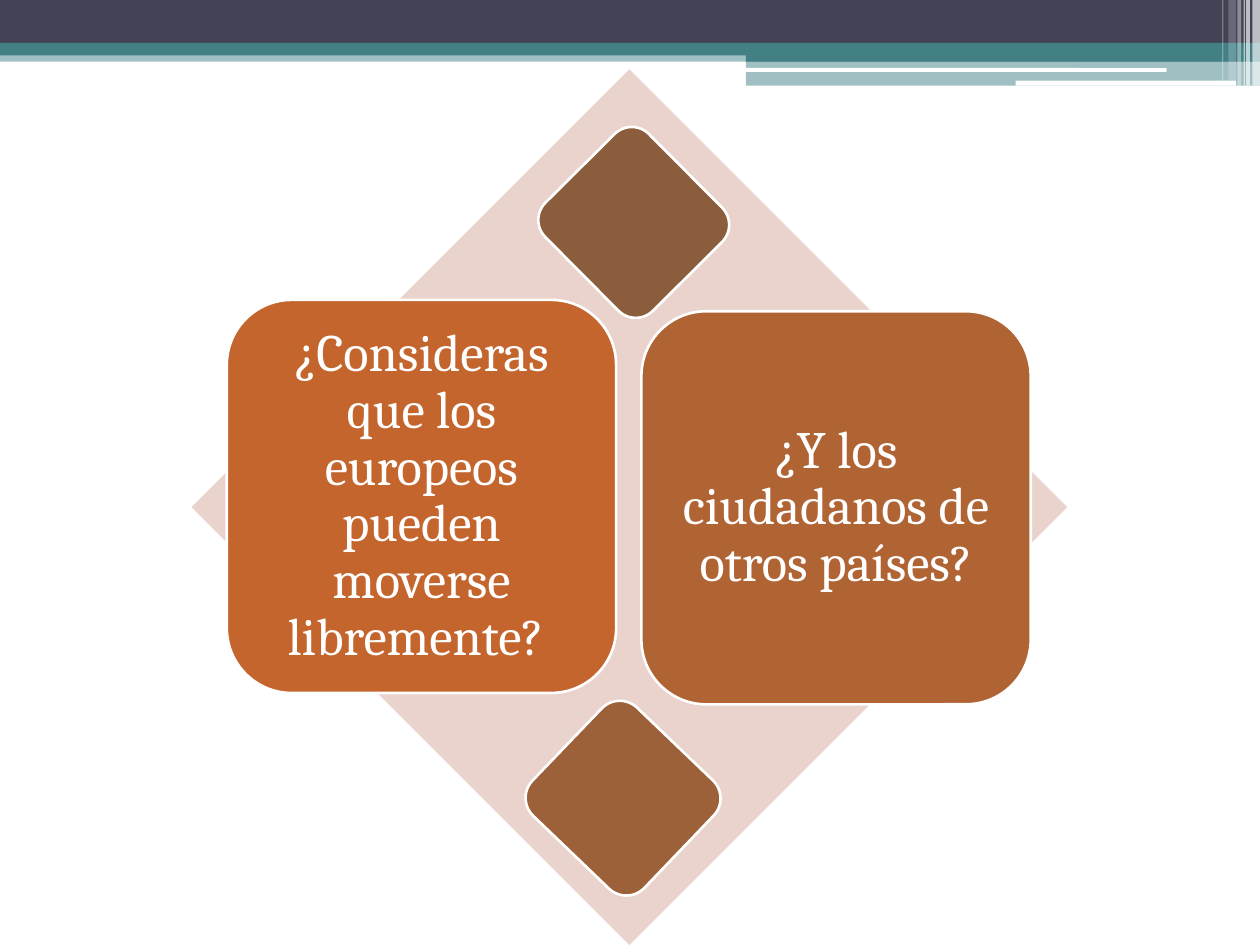
from dataclasses import dataclass

import pptx
import pptx.dml.color
import pptx.enum.shapes
import pptx.enum.text
import pptx.oxml
import pptx.oxml.ns
import pptx.util
from pptx.util import Inches

SHAPES = pptx.enum.shapes.MSO_SHAPE
WHITE, TEAL, NAVY = "FFFFFF", "438086", "424456"


@dataclass
class Block:
    """A filled shape, measured in inches, with optional outline and text."""
    left: float
    top: float
    width: float
    height: float
    fill: str
    opacity: int = 100
    kind: SHAPES = SHAPES.RECTANGLE
    outline: bool = False
    rotation: float = 0
    text: str = ""


HEADER_BANDS = [
    Block(0, 0.4, 10, 0.09, TEAL, 50),
    Block(0, 0, 10, 0.34, NAVY),
    Block(0, 0.34, 10, 0.1, TEAL),
    Block(5.92, 0.39, 4.08, 0.1, TEAL),
    Block(5.92, 0.48, 4.08, 0.2, TEAL, 50),
    Block(5.91, 0.54, 3.35, 0.03, WHITE, kind=SHAPES.ROUNDED_RECTANGLE),
    Block(8.06, 0.64, 1.75, 0.04, WHITE, kind=SHAPES.ROUNDED_RECTANGLE),
]
HEADER_STRIPES = [
    Block(left, 0, width, height, WHITE, opacity)
    for left, width, height, opacity in [
        (9.94, 0.06, 0.68, 65),
        (9.89, 0.03, 0.68, 65),
        (9.87, 0.01, 0.68, 60),
        (9.82, 0.03, 0.68, 40),
        (9.75, 0.06, 0.64, 20),
        (9.7, 0.01, 0.64, 30),
    ]
]
DIAMOND = Block(1.52, 0.55, 6.95, 6.95, "EAD3CD", kind=SHAPES.DIAMOND)
TILES = [
    Block(left, top, width, height, fill, kind=SHAPES.ROUNDED_RECTANGLE,
          outline=True, rotation=rotation, text=text)
    for left, top, width, height, fill, rotation, text in [
        (1.8, 2.38, 3.09, 3.12, "C4652D", 0,
         "¿Consideras que los europeos pueden moverse libremente? "),
        (5.09, 2.47, 3.09, 3.12, "B06333", 0, "¿Y los ciudadanos de otros países?"),
        (4.35, 5.72, 1.19, 1.23, "9D6139", 313.8, ""),
        (4.45, 1.16, 1.16, 1.21, "8B5D3D", 315.2, ""),
    ]
]


def color(value: str) -> pptx.dml.color.RGBColor:
    """Turn a hex string into a colour."""
    return pptx.dml.color.RGBColor.from_string(value)


def set_opacity(shape, percent: int) -> None:
    """Make the solid fill of a shape partly transparent."""
    fill_color = shape.fill._xPr.find(".//" + pptx.oxml.ns.qn("a:srgbClr"))
    alpha = pptx.oxml.parse_xml(
        f'<a:alpha {pptx.oxml.ns.nsdecls("a")} val="{percent * 1000}"/>')
    fill_color.append(alpha)


def write_text(shape, text: str) -> None:
    """Write a centred white question inside a tile."""
    frame = shape.text_frame
    frame.word_wrap = True
    frame.vertical_anchor = pptx.enum.text.MSO_ANCHOR.MIDDLE
    frame.margin_left = frame.margin_right = Inches(0.12)
    frame.margin_top = frame.margin_bottom = Inches(0.12)
    frame.text = text
    paragraph = frame.paragraphs[0]
    paragraph.alignment = pptx.enum.text.PP_ALIGN.CENTER
    paragraph.line_spacing = 0.9
    paragraph.font.name = "Cambria"
    paragraph.font.size = pptx.util.Pt(30)
    paragraph.font.color.rgb = color(WHITE)


def draw_block(slide, block: Block) -> None:
    """Draw one block on the slide."""
    shape = slide.shapes.add_shape(
        block.kind, Inches(block.left), Inches(block.top),
        Inches(block.width), Inches(block.height))
    shape.shadow.inherit = False
    shape.rotation = block.rotation
    shape.fill.solid()
    shape.fill.fore_color.rgb = color(block.fill)
    if block.opacity < 100:
        set_opacity(shape, block.opacity)
    if block.outline:
        shape.line.color.rgb = color(WHITE)
        shape.line.width = pptx.util.Pt(1.5)
    else:
        shape.line.fill.background()
    if block.text:
        write_text(shape, block.text)


def main() -> None:
    """Build and save the presentation."""
    presentation = pptx.Presentation()
    presentation.slide_width = Inches(10)
    presentation.slide_height = Inches(7.5)
    slide = presentation.slides.add_slide(presentation.slide_layouts[6])
    for block in [*HEADER_BANDS, *HEADER_STRIPES, DIAMOND, *TILES]:
        draw_block(slide, block)
    presentation.save("out.pptx")


if __name__ == "__main__":
    main()
